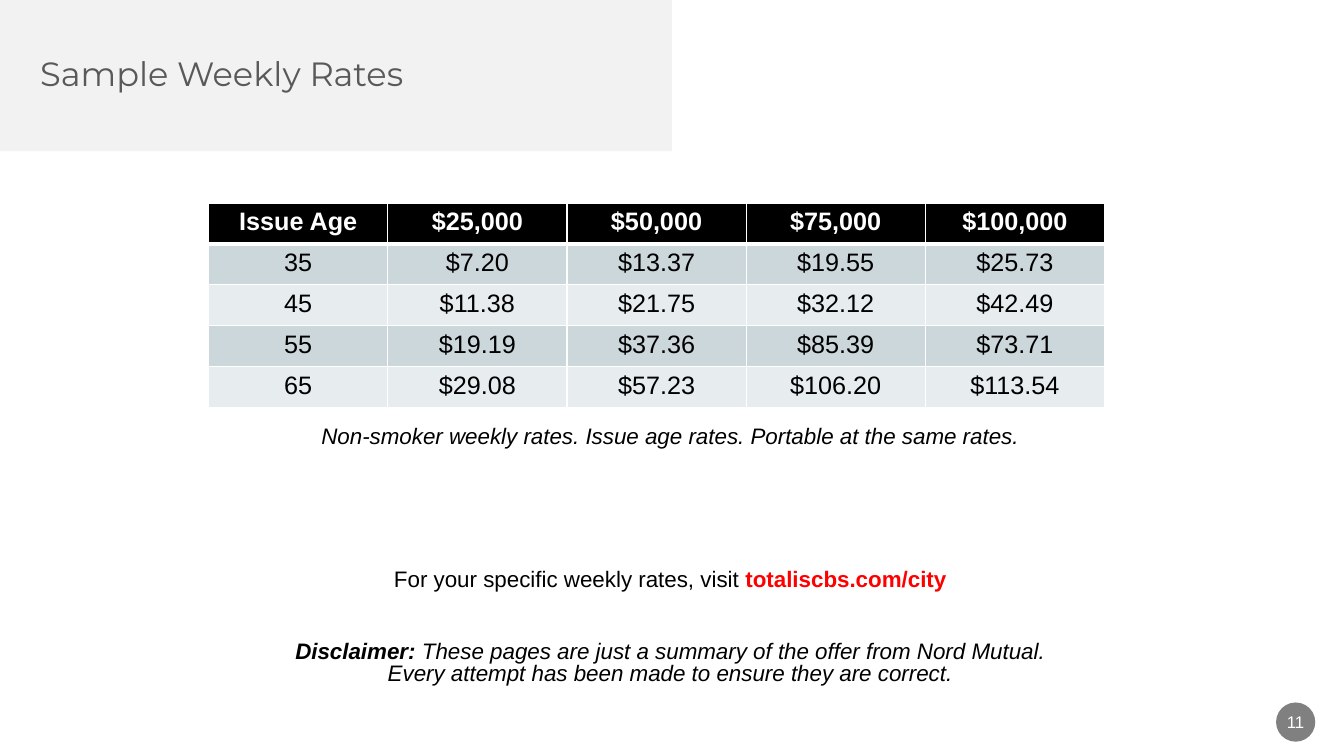
from lxml.etree import SubElement
from pptx import Presentation
from pptx.dml.color import RGBColor
from pptx.enum.shapes import MSO_SHAPE
from pptx.enum.text import MSO_ANCHOR, PP_ALIGN
from pptx.oxml.ns import qn
from pptx.util import Pt

BLACK = RGBColor(0x00, 0x00, 0x00)
WHITE = RGBColor(0xFF, 0xFF, 0xFF)
RED = RGBColor(0xFF, 0x00, 0x00)
TITLE_GRAY = RGBColor(0x59, 0x59, 0x59)
BAND_GRAY = RGBColor(0xF2, 0xF2, 0xF2)
BADGE_GRAY = RGBColor(0x80, 0x80, 0x80)
ROW_DARK = RGBColor(0xCC, 0xD7, 0xDC)
ROW_LIGHT = RGBColor(0xE7, 0xEC, 0xEE)

RATES = [
    ["Issue Age", "$25,000", "$50,000", "$75,000", "$100,000"],
    ["35", "$7.20", "$13.37", "$19.55", "$25.73"],
    ["45", "$11.38", "$21.75", "$32.12", "$42.49"],
    ["55", "$19.19", "$37.36", "$85.39", "$73.71"],
    ["65", "$29.08", "$57.23", "$106.20", "$113.54"],
]


def set_font(font, name, size, color, bold=False):
    font.name = name
    font.size = Pt(size)
    font.color.rgb = color
    font.bold = bold


def add_filled(s, kind, left, top, width, height, color):
    sp = s.shapes.add_shape(kind, Pt(left), Pt(top), Pt(width), Pt(height))
    sp.shadow.inherit = False
    sp.fill.solid()
    sp.fill.fore_color.rgb = color
    sp.line.fill.background()
    return sp


def add_text_frame(s, left, top, width, height):
    tf = s.shapes.add_textbox(Pt(left), Pt(top), Pt(width), Pt(height)).text_frame
    tf.word_wrap = True
    return tf


def add_title(s, text):
    tf = add_text_frame(s, 21.6, 7.2, 432, 93.6)
    tf.vertical_anchor = MSO_ANCHOR.MIDDLE
    p = tf.paragraphs[0]
    p.text = text
    p.line_spacing = 0.9
    set_font(p.font, "Montserrat", 24, TITLE_GRAY)


def add_page_number(s, number):
    sp = add_filled(s, MSO_SHAPE.OVAL, 911.5, 501.8, 28, 28, BADGE_GRAY)
    tf = sp.text_frame
    tf.margin_left = tf.margin_right = tf.margin_top = tf.margin_bottom = 0
    tf.word_wrap = False
    tf.vertical_anchor = MSO_ANCHOR.MIDDLE
    p = tf.paragraphs[0]
    p.text = number
    p.alignment = PP_ALIGN.CENTER
    set_font(p.font, "Arial", 12, WHITE)


def set_borders(cell, top, bottom):
    tc_pr = cell._tc.get_or_add_tcPr()
    for side, width in (("L", 1), ("R", 1), ("T", top), ("B", bottom)):
        ln = SubElement(tc_pr, qn(f"a:ln{side}"), w=str(Pt(width)))
        SubElement(SubElement(ln, qn("a:solidFill")), qn("a:srgbClr"), val=str(WHITE))


def add_rate_table(s, rows):
    frame = s.shapes.add_table(len(rows), len(rows[0]), Pt(149), Pt(145), Pt(640), Pt(146))
    for i, row in enumerate(rows):
        header = i == 0
        for j, text in enumerate(row):
            cell = frame.table.cell(i, j)
            set_borders(cell, 3 if i == 1 else 1, 3 if header else 1)
            cell.fill.solid()
            cell.fill.fore_color.rgb = BLACK if header else (ROW_LIGHT, ROW_DARK)[i % 2]
            p = cell.text_frame.paragraphs[0]
            p.text = text
            p.alignment = PP_ALIGN.CENTER
            set_font(p.font, "Arial", 18, WHITE if header else BLACK, header)


def add_note(p, runs, space_before=0, italic=False):
    p.alignment = PP_ALIGN.CENTER
    p.line_spacing = 0.8
    p.space_before = Pt(space_before)
    for text, color, bold in runs:
        for i, line in enumerate(text.split("\n")):
            if i:
                p.add_line_break()
            r = p.add_run()
            r.text = line
            set_font(r.font, "Arial", 16, color, bold)
            r.font.italic = italic


def add_notes(s):
    tf = add_text_frame(s, 21.6, 302, 914.4, 196)
    add_note(tf.paragraphs[0], [
        ("Non-smoker weekly rates. Issue age rates. Portable at the same rates.", BLACK, False),
    ], italic=True)
    add_note(tf.add_paragraph(), [
        ("For your specific weekly rates, visit ", BLACK, False),
        ("totaliscbs.com/city", RED, True),
    ], space_before=86.7)
    add_note(tf.add_paragraph(), [
        ("Disclaimer: ", BLACK, True),
        ("These pages are just a summary of the offer from Nord Mutual.\n"
         "Every attempt has been made to ensure they are correct.", BLACK, False),
    ], space_before=36, italic=True)


def main():
    prs = Presentation()
    prs.slide_width, prs.slide_height = Pt(960), Pt(540)
    s = prs.slides.add_slide(prs.slide_layouts[6])
    add_filled(s, MSO_SHAPE.RECTANGLE, 0, 0, 480, 108, BAND_GRAY)
    add_title(s, "Sample Weekly Rates")
    add_rate_table(s, RATES)
    add_notes(s)
    add_page_number(s, "11")
    prs.save("out.pptx")


if __name__ == "__main__":
    main()
